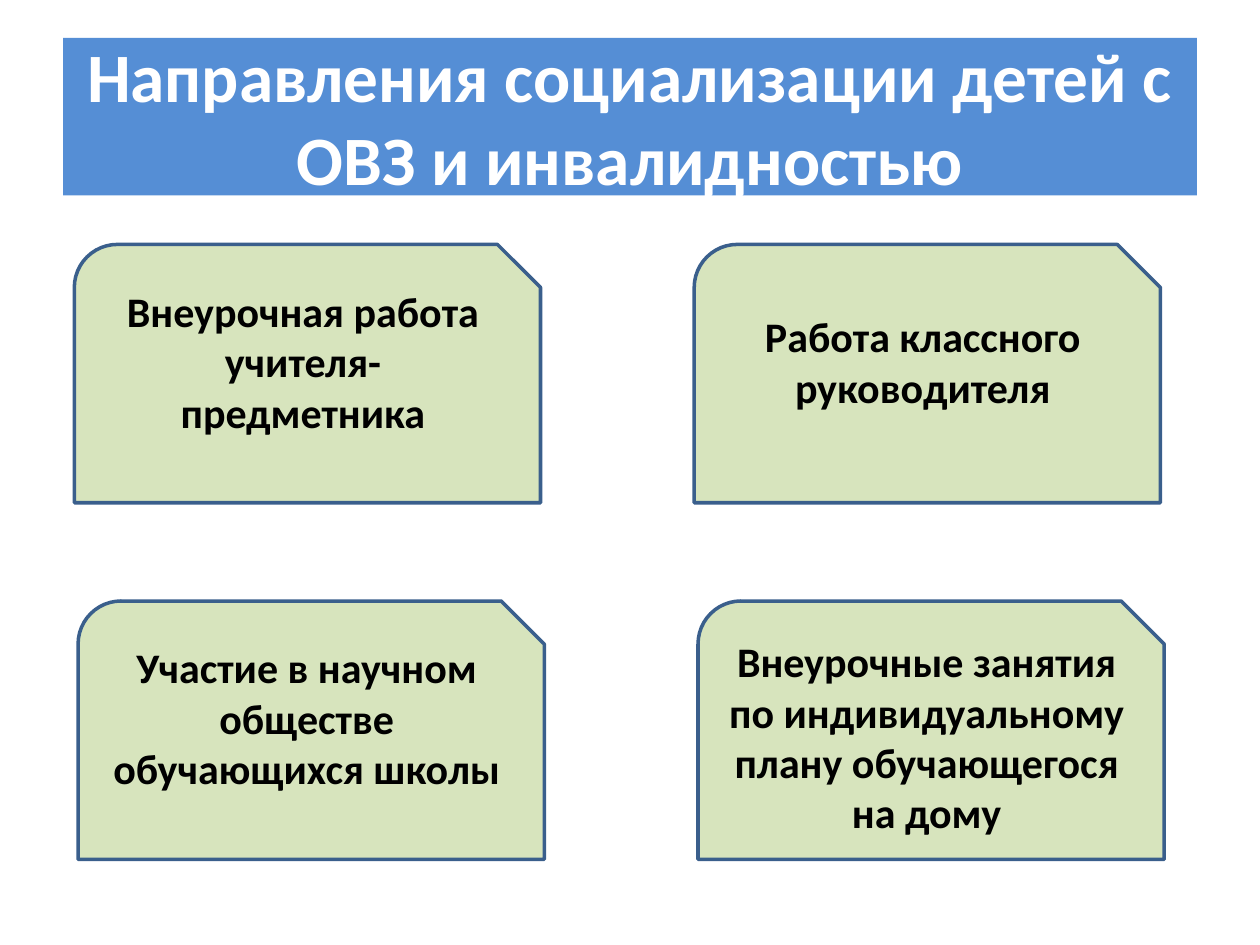
from dataclasses import dataclass

from pptx import Presentation
from pptx.dml.color import RGBColor
from pptx.enum.shapes import MSO_SHAPE
from pptx.enum.text import MSO_ANCHOR, MSO_AUTO_SIZE, PP_ALIGN
from pptx.util import Inches, Pt


@dataclass(frozen=True)
class Theme:
    font: str = "Calibri"
    title_size: float = 39.6
    card_size: float = 24
    title_fill: str = "558ED5"
    title_text: str = "FFFFFF"
    card_fill: str = "D7E4BD"
    card_line: str = "3A5F8C"
    card_text: str = "000000"
    line_width: float = 2


THEME = Theme()

# Content: each row has its left edge, top and cards (text, bottom inset)
TITLE = "Направления социализации детей с ОВЗ и инвалидностью"
ROWS = [
    (0.59, 1.94, [("Внеурочная работа учителя- предметника", 0.35),
                  ("Работа классного руководителя", 0.35)]),
    (0.62, 4.77, [("Участие в научном обществе обучающихся школы", 0.35),
                  ("Внеурочные занятия по индивидуальному плану "
                   "обучающегося на дому", 0.05)]),
]
CARD_WIDTH, CARD_HEIGHT, COLUMN_STEP = 3.7, 2.05, 4.92


def fill_shape(shape, color):
    shape.fill.solid()
    shape.fill.fore_color.rgb = RGBColor.from_string(color)


def write_text(shape, text, size, color):
    text_frame = shape.text_frame
    text_frame.text = text
    text_frame.word_wrap = True
    text_frame.auto_size = MSO_AUTO_SIZE.NONE
    text_frame.vertical_anchor = MSO_ANCHOR.MIDDLE
    paragraph = text_frame.paragraphs[0]
    paragraph.alignment = PP_ALIGN.CENTER
    font = paragraph.runs[0].font
    font.name, font.size, font.bold = THEME.font, Pt(size), True
    font.color.rgb = RGBColor.from_string(color)


def add_card(slide, left, top, text, bottom_inset):
    card = slide.shapes.add_shape(
        MSO_SHAPE.SNIP_ROUND_RECTANGLE, Inches(left), Inches(top),
        Inches(CARD_WIDTH), Inches(CARD_HEIGHT))
    card.shadow.inherit = False
    fill_shape(card, THEME.card_fill)
    card.line.color.rgb = RGBColor.from_string(THEME.card_line)
    card.line.width = Pt(THEME.line_width)
    write_text(card, text, THEME.card_size, THEME.card_text)
    card.text_frame.margin_bottom = Inches(bottom_inset)


def main():
    presentation = Presentation()
    presentation.slide_width, presentation.slide_height = Inches(10), Inches(7.5)
    slide = presentation.slides.add_slide(
        presentation.slide_layouts.get_by_name("Title Only"))

    # Title band
    title = slide.shapes.title
    title.left, title.top = Inches(0.5), Inches(0.3)
    title.width, title.height = Inches(9), Inches(1.25)
    fill_shape(title, THEME.title_fill)
    write_text(title, TITLE, THEME.title_size, THEME.title_text)

    # Cards, two to a row
    for left, top, cards in ROWS:
        for column, (text, bottom_inset) in enumerate(cards):
            add_card(slide, left + column * COLUMN_STEP, top, text, bottom_inset)

    presentation.save("out.pptx")


if __name__ == "__main__":
    main()
